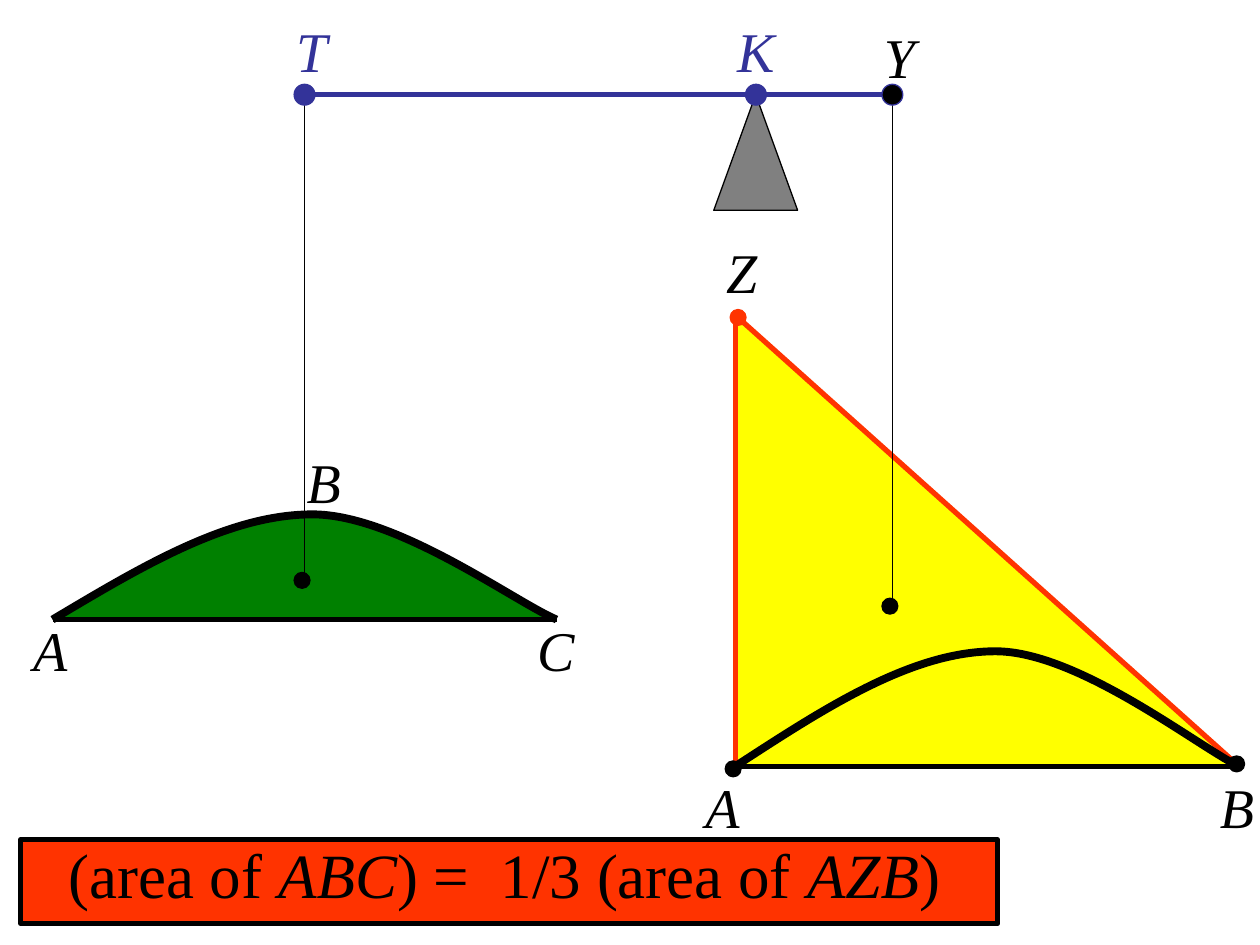
from lxml.etree import SubElement
from pptx import Presentation
from pptx.dml.color import RGBColor
from pptx.enum.shapes import MSO_CONNECTOR as Link, MSO_SHAPE as Preset
from pptx.enum.text import MSO_AUTO_SIZE as AutoSize, PP_ALIGN as Align
from pptx.oxml.ns import qn
from pptx.util import Cm, Pt

BLACK = RGBColor(0x00, 0x00, 0x00)
BLUE = RGBColor(0x33, 0x33, 0x99)
RED = RGBColor(0xFF, 0x33, 0x00)
YELLOW = RGBColor(0xFF, 0xFF, 0x00)
GREEN = RGBColor(0x00, 0x80, 0x00)
GRAY = RGBColor(0x80, 0x80, 0x80)

THIN, BOLD, CURVE = 0.75, 3, 4.5
SMALL, LARGE = 0.32, 0.42

BEAM_Y = 1.91
T, K, Y = (6.14, BEAM_Y), (15.24, BEAM_Y), (17.99, BEAM_Y)
A, B, Z = (14.82, 15.45), (24.98, 15.45), (14.82, 6.35)
SEGMENT_A, SEGMENT_C = (1.06, 12.49), (11.22, 12.49)
SEGMENT_CENTROID, TRIANGLE_CENTROID = (6.09, 11.7), (17.94, 12.22)

SEGMENT_ARC = [SEGMENT_A, (2.84, 11.43), (4.6, 10.37), (6.3, 10.37),
               (8, 10.37), (10.39, 12.14), SEGMENT_C]
PARABOLA_ARC = [A, (16.59, 14.3), (18.36, 13.13), (20.07, 13.13),
                (21.74, 13.13), (24.16, 15.06), B]

LABELS = [
    ("T", 5.72, 0.2, BLUE),
    ("K", 14.61, 0.2, BLUE),
    ("Y", 17.57, 0.32, BLACK),
    ("A", 13.97, 15.45, BLACK),
    ("B", 24.34, 15.45, BLACK),
    ("Z", 14.39, 4.66, BLACK),
    ("A", 0.42, 12.28, BLACK),
    ("C", 10.58, 12.28, BLACK),
    ("B", 5.93, 8.89, BLACK),
]
STATEMENT = [("(area of ", False), ("ABC", True), (") =  1/3 (area of ", False),
             ("AZB", True), (")", False)]


def set_values(target, values):
    for name, value in values.items():
        setattr(target, name, value)


def paint(figure, fill, line, weight):
    figure.shadow.inherit = False
    if fill is None:
        figure.fill.background()
    else:
        figure.fill.solid()
        figure.fill.fore_color.rgb = fill
    figure.line.color.rgb = line
    figure.line.width = Pt(weight)


def add_figure(slide, preset, box, fill, line=BLACK, weight=THIN):
    figure = slide.shapes.add_shape(preset, *map(Cm, box))
    paint(figure, fill, line, weight)


def add_dot(slide, center, size, fill, line):
    x, y = center
    add_figure(slide, Preset.OVAL, (x - size / 2, y - size / 2, size, size), fill, line)


def add_segment(slide, start, end, color=BLACK, weight=BOLD):
    segment = slide.shapes.add_connector(Link.STRAIGHT, *map(Cm, start + end))
    segment.line.color.rgb = color
    segment.line.width = Pt(weight)
    SubElement(segment._element.spPr, qn("a:effectLst"))


def add_arc(slide, points, fill=None):
    start, *rest = [(Cm(x), Cm(y)) for x, y in points]
    builder = slide.shapes.build_freeform(*start)
    builder.add_line_segments(rest, close=False)
    arc = builder.convert_to_shape()
    outline = next(arc._element.iter(qn("a:path")))
    sides = outline.findall(qn("a:lnTo"))
    for first in range(0, len(sides), 3):
        bezier = SubElement(outline, qn("a:cubicBezTo"))
        for side in sides[first:first + 3]:
            bezier.append(side[0])
            outline.remove(side)
    paint(arc, fill, BLACK, CURVE)


def add_text(slide, box, runs, size, color=BLACK, align=Align.LEFT):
    frame = slide.shapes.add_textbox(*map(Cm, box)).text_frame
    set_values(frame, {"word_wrap": True, "auto_size": AutoSize.SHAPE_TO_FIT_TEXT})
    paragraph = frame.paragraphs[0]
    paragraph.alignment = align
    for words, italic in runs:
        run = paragraph.add_run()
        run.text = words
        set_values(run.font, {"name": "Times New Roman", "size": Pt(size), "italic": italic})
        run.font.color.rgb = color


def add_areas(slide):
    add_figure(slide, Preset.RECTANGLE, (0.42, 16.93, 19.69, 1.69), RED, weight=BOLD)
    add_figure(slide, Preset.ISOSCELES_TRIANGLE, (14.39, BEAM_Y, 1.69, 2.33), GRAY)
    add_figure(slide, Preset.RIGHT_TRIANGLE, (*Z, B[0] - A[0], A[1] - Z[1]), YELLOW)
    add_segment(slide, B, Z, RED)
    add_segment(slide, A, B)
    add_segment(slide, A, Z, RED)
    add_arc(slide, PARABOLA_ARC)
    add_arc(slide, SEGMENT_ARC, GREEN)
    add_segment(slide, SEGMENT_A, SEGMENT_C)
    for center, color in [((14.78, 15.5), BLACK), ((24.93, 15.4), BLACK),
                          (TRIANGLE_CENTROID, BLACK), ((14.88, 6.4), RED),
                          (SEGMENT_CENTROID, BLACK)]:
        add_dot(slide, center, SMALL, color, color)


def add_balance(slide):
    add_segment(slide, Y, T, BLUE)
    for hook, centroid in [(Y, TRIANGLE_CENTROID), (T, SEGMENT_CENTROID)]:
        add_segment(slide, (hook[0], centroid[1]), hook, weight=THIN)
    for center, color in [(K, BLUE), (Y, BLACK), (T, BLUE)]:
        add_dot(slide, center, LARGE, color, BLUE)


def main():
    deck = Presentation()
    set_values(deck, {"slide_width": Cm(25.4), "slide_height": Cm(19.05)})
    slide = deck.slides.add_slide(deck.slide_layouts[6])
    add_areas(slide)
    add_balance(slide)
    for letter, left, top, color in LABELS:
        add_text(slide, (left, top, 2.54, 1.6), [(letter, True)], 32, color)
    add_text(slide, (0.64, 16.72, 19.05, 1.78), STATEMENT, 36, align=Align.CENTER)
    deck.save("out.pptx")


if __name__ == "__main__":
    main()
